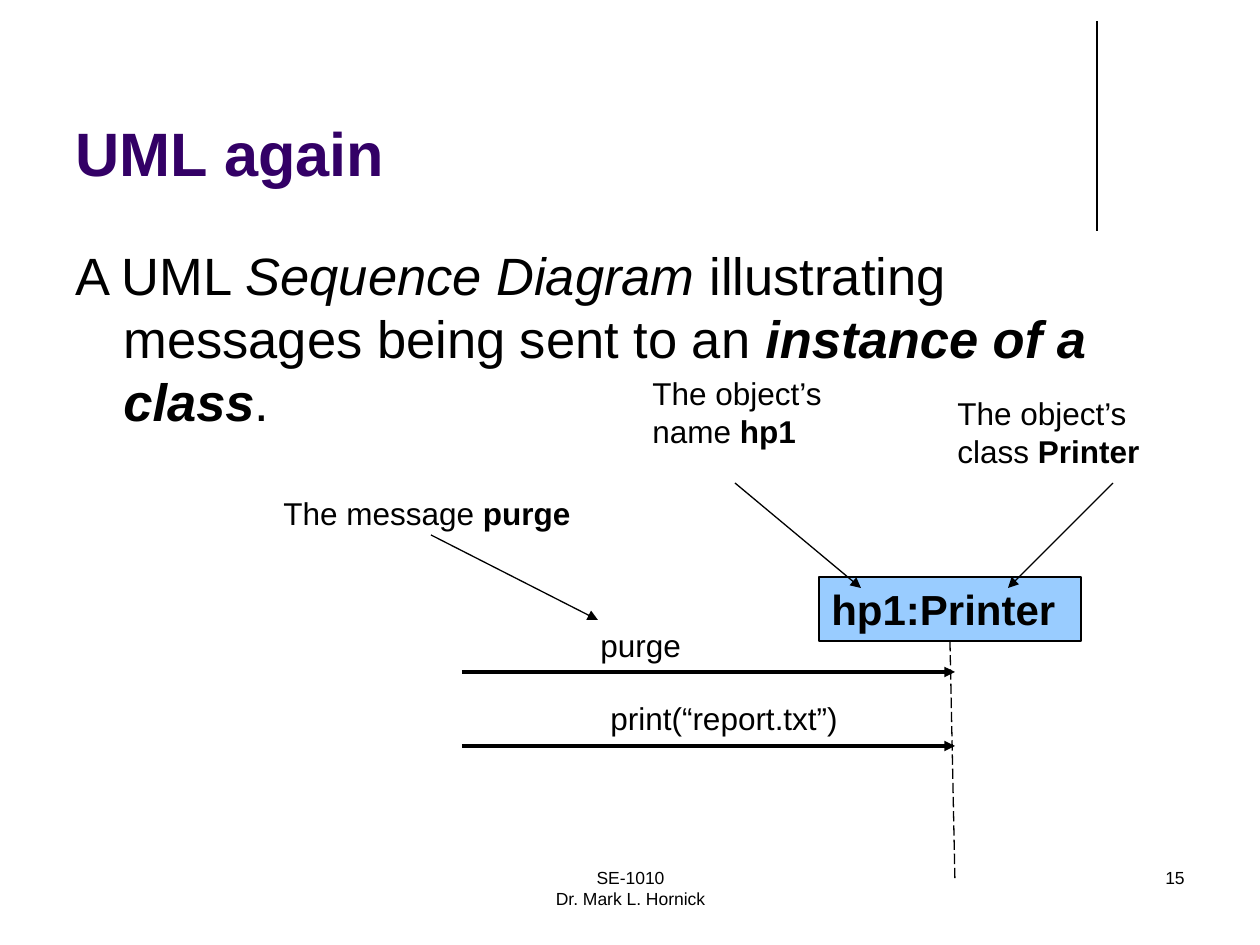
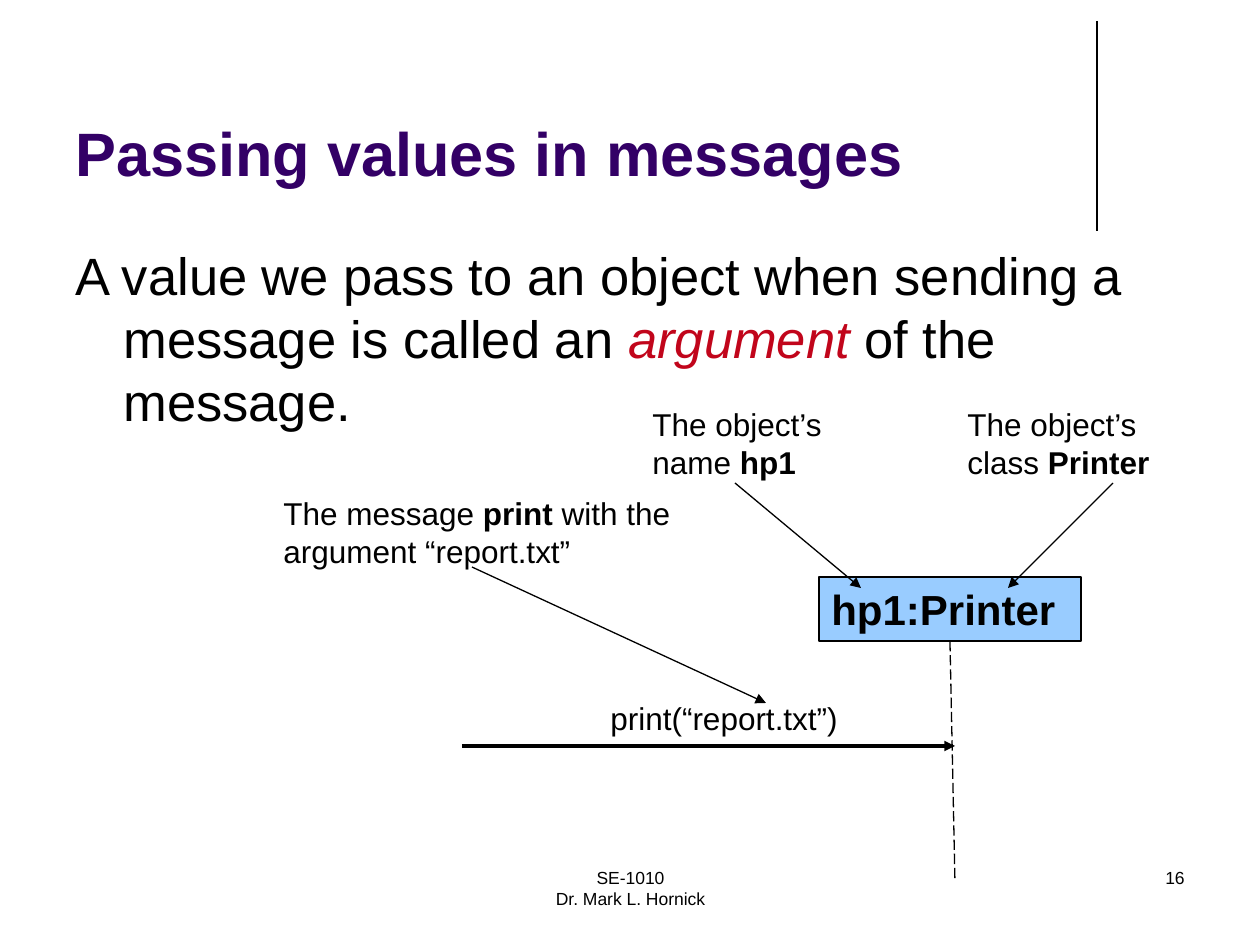
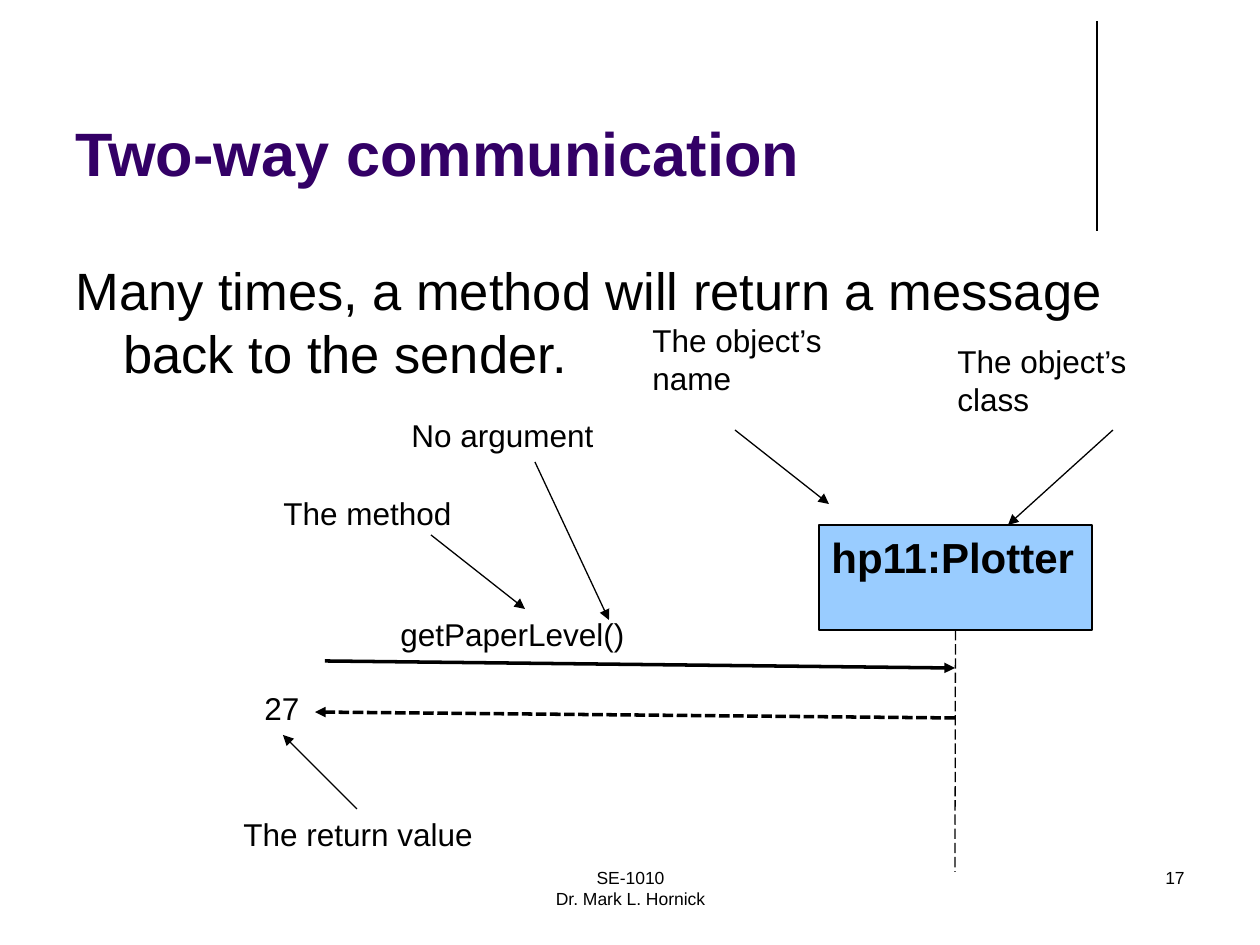
from dataclasses import dataclass

from lxml.etree import SubElement
from pptx import Presentation
from pptx.dml.color import RGBColor
from pptx.enum.dml import MSO_LINE
from pptx.enum.shapes import MSO_CONNECTOR, MSO_SHAPE
from pptx.enum.text import MSO_ANCHOR, PP_ALIGN
from pptx.oxml.ns import qn
from pptx.util import Emu, Pt

BOTTOM_SITE = 2


@dataclass(frozen=True)
class Theme:
    font: str = "Arial"
    ink: str = "000000"
    title: str = "330066"
    accent: str = "C1051B"
    object_fill: str = "99CCFF"
    title_size: int = 35
    body_size: int = 30
    object_size: int = 24
    label_size: int = 18
    footer_size: int = 10
    thin: float = 0.75
    thick: float = 2


@dataclass(frozen=True)
class Box:
    left: int
    top: int
    width: int
    height: int

    def inner(self, left, top, width, height):
        return Box(self.left + left, self.top + top, width, height)

    def point(self, spot):
        return self.left + spot[0], self.top + spot[1]

    def emu(self):
        return [px(n) for n in (self.left, self.top, self.width, self.height)]


THEME = Theme()
PAGE = Box(0, 0, 1260, 945)
BODY = Box(63, 237, 1134, 607)
DIAGRAM = Box(200, 300, 1020, 585)


def px(length):
    return Emu(round(length * 914400 / 126))


# Text and line helpers
def write(frame, spans, size, color=THEME.ink, bold=None, align=None):
    """Spans are (text, style) pairs; styles are b, i and r (bold, italic, red)."""
    para = frame.paragraphs[0]
    para.alignment = align
    font = para.font
    font.name, font.size, font.bold = THEME.font, Pt(size), bold
    font.color.rgb = RGBColor.from_string(color)
    for text, style in spans:
        for number, line in enumerate(text.split("\n")):
            if number:
                para.add_line_break()
            span = para.add_run()
            span.text = line
            if "b" in style:
                span.font.bold = True
            if "i" in style:
                span.font.italic = True
            if "r" in style:
                span.font.color.rgb = RGBColor.from_string(THEME.accent)
    return para


def add_text(page, box, spans, size, wrap=True, anchor=MSO_ANCHOR.TOP, **look):
    frame = page.shapes.add_textbox(*box.emu()).text_frame
    frame.word_wrap = wrap
    frame.vertical_anchor = anchor
    return write(frame, spans, size, **look)


def add_line(page, start, end, width=THEME.thin, dash=None, arrow=False):
    line = page.shapes.add_connector(
        MSO_CONNECTOR.STRAIGHT, *[px(n) for n in (*start, *end)])
    line.line.color.rgb = RGBColor.from_string(THEME.ink)
    line.line.width = Pt(width)
    if dash:
        line.line.dash_style = dash
    properties = line.element.spPr
    if arrow:
        SubElement(properties.find(qn("a:ln")), qn("a:tailEnd"), type="triangle")
    SubElement(properties, qn("a:effectLst"))
    return line


# Title, corner rule and footer of every slide
def add_frame(page, box, title, number):
    add_line(page, box.point((1097, 21)), box.point((1097, 231)))
    add_text(page, box.inner(431, 861, 399, 63),
             [("SE-1010\nDr. Mark L. Hornick", "")], THEME.footer_size,
             align=PP_ALIGN.CENTER)
    add_text(page, box.inner(903, 861, 294, 63), [(str(number), "")],
             THEME.footer_size, align=PP_ALIGN.RIGHT)
    add_text(page, box.inner(63, 16, 1040, 179), [(title, "")], THEME.title_size,
             anchor=MSO_ANCHOR.BOTTOM, color=THEME.title, bold=True)


# Opening statement with a hanging indent
def add_statement(page, box, spans):
    para = add_text(page, box, spans, THEME.body_size)
    indent = px(48)
    properties = para._p.get_or_add_pPr()
    properties.set("marL", str(indent))
    properties.set("indent", str(-indent))


# Parts of the sequence diagram
def add_object(page, area, name, top, size, life_end):
    box = area.inner(619, top, *size)
    shape = page.shapes.add_shape(MSO_SHAPE.RECTANGLE, *box.emu())
    shape.shadow.inherit = False
    shape.fill.solid()
    shape.fill.fore_color.rgb = RGBColor.from_string(THEME.object_fill)
    shape.line.color.rgb = RGBColor.from_string(THEME.ink)
    shape.line.width = Pt(THEME.thin)
    shape.text_frame.word_wrap = True
    shape.text_frame.vertical_anchor = MSO_ANCHOR.TOP
    write(shape.text_frame, [(name, "")], THEME.object_size, bold=True,
          align=PP_ALIGN.LEFT)
    start = box.point((box.width // 2, box.height))
    lifeline = add_line(page, start, area.point((755, life_end)),
                        dash=MSO_LINE.LONG_DASH)
    lifeline.begin_connect(shape, BOTTOM_SITE)


def add_label(page, area, place, spans, wrap=False):
    add_text(page, area.inner(*place), spans, THEME.label_size, wrap=wrap)


def add_diagram(page, area, target, labels, notes, messages, pointers):
    add_object(page, area, *target)
    for place, spans in labels:
        add_label(page, area, place, spans)
    # Notes on the object's name and class
    for (left, top, width), spans in notes:
        add_label(page, area, (left, top, width, 88), spans, wrap=True)
    for start, end, dash in messages:
        add_line(page, area.point(start), area.point(end), THEME.thick, dash, True)
    for start, end in pointers:
        add_line(page, area.point(start), area.point(end), arrow=True)


# What the printer slides share
PRINTER = ("hp1:Printer", 277, (262, 64), 582)
PRINTER_POINTERS = [((535, 183), (661, 288)), ((913, 183), (808, 288))]
PRINT_LABEL = ((398, 393, 255, 50), [("print(“report.txt”)", "")])
PRINT_MESSAGE = ((262, 446), (755, 446), None)
NAME_NOTE = [("The object’s name ", ""), ("hp1", "b")]
CLASS_NOTE = [("The object’s class ", ""), ("Printer", "b")]

SLIDES = [
    dict(
        title="UML again",
        statement=[("A UML ", ""), ("Sequence Diagram", "i"),
                   (" illustrating messages being sent to an ", ""),
                   ("instance of a class", "bi"), (".", "")],
        diagram=dict(
            target=PRINTER,
            labels=[((388, 320, 106, 50), [("purge", "")]),
                    ((71, 188, 312, 50), [("The message ", ""), ("purge", "b")]),
                    PRINT_LABEL],
            notes=[((440, 68, 231), NAME_NOTE), ((745, 88, 262), CLASS_NOTE)],
            messages=[((262, 372), (755, 372), None), PRINT_MESSAGE],
            pointers=[((231, 235), (398, 320)), *PRINTER_POINTERS])),
    dict(
        title="Passing values in messages",
        statement=[("A value we pass to an object when sending a message "
                    "is called an ", ""),
                   ("argument", "ir"), (" of the message.", "")],
        diagram=dict(
            target=PRINTER,
            labels=[((71, 188, 416, 90),
                     [("The message ", ""), ("print ", "b"),
                      ("with the\nargument “report.txt”", "")]),
                    PRINT_LABEL],
            notes=[((440, 99, 231), NAME_NOTE), ((755, 99, 262), CLASS_NOTE)],
            messages=[PRINT_MESSAGE],
            pointers=[((272, 267), (566, 403)), *PRINTER_POINTERS])),
    dict(
        title="Two-way communication",
        statement=[("Many times, a method will return a message "
                    "back to the sender.", "")],
        drop=15,
        diagram=dict(
            target=("hp11:Plotter", 225, (273, 105), 572),
            labels=[((188, 309, 252, 50), [("getPaperLevel()", "")]),
                    ((71, 188, 195, 50), [("The method", "")]),
                    ((199, 110, 208, 50), [("No argument", "")]),
                    ((52, 383, 60, 50), [("27", "")]),
                    ((31, 509, 255, 50), [("The return value", "")])],
            notes=[((440, 15, 231), [("The object’s name", "")]),
                   ((745, 36, 262), [("The object’s class", "")])],
            messages=[((125, 361), (755, 368), None),
                      ((755, 418), (115, 412), MSO_LINE.SQUARE_DOT)],
            pointers=[((231, 235), (325, 309)), ((535, 130), (629, 204)),
                      ((913, 130), (808, 225)), ((335, 162), (409, 320)),
                      ((157, 509), (83, 435))])),
]


def main():
    deck = Presentation()
    deck.slide_width, deck.slide_height = px(PAGE.width), px(PAGE.height)
    for number, content in enumerate(SLIDES, start=15):
        page = deck.slides.add_slide(deck.slide_layouts[6])
        add_frame(page, PAGE, content["title"], number)
        statement_box = BODY.inner(0, content.get("drop", 0), BODY.width, BODY.height)
        add_statement(page, statement_box, content["statement"])
        add_diagram(page, DIAGRAM, **content["diagram"])
    deck.save("out.pptx")


if __name__ == "__main__":
    main()
